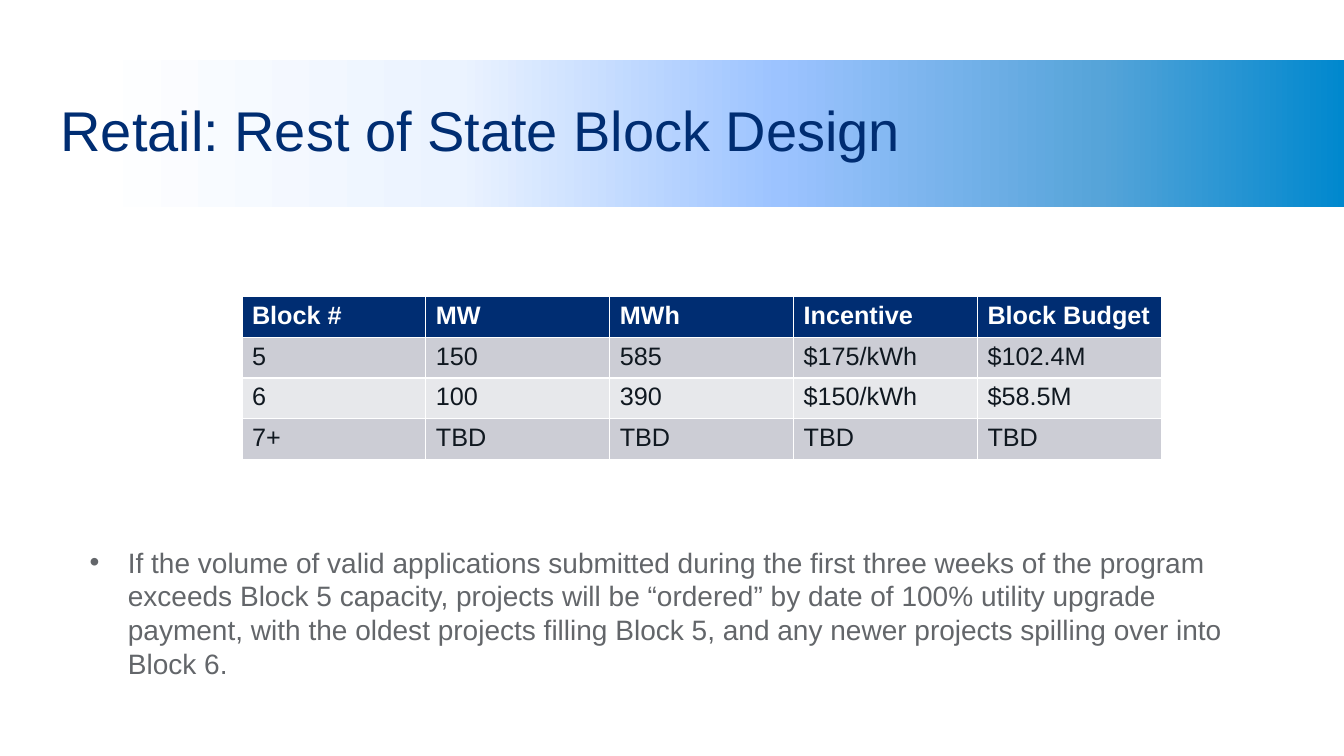
import pptx
import pptx.util
import pptx.oxml.ns
import pptx.enum.shapes
import pptx.enum.text
from lxml import etree
from pptx.dml.color import RGBColor

Inches, Pt, qn = pptx.util.Inches, pptx.util.Pt, pptx.oxml.ns.qn
FONT = "Arial"
COLORS = {"navy": "002D72", "white": "FFFFFF", "ink": "101820", "gray": "63666A",
          "band_dark": "CCCDD5", "band_light": "E7E8EB"}
BANNER_STOPS = [(2, "FFFFFF"), (31, "EBF3FF"), (56, "9CC3FF"), (81, "56A4D9"), (100, "0088CE")]
ROWS = [
    ["Block #", "MW", "MWh", "Incentive", "Block Budget"],
    ["5", "150", "585", "$175/kWh", "$102.4M"],
    ["6", "100", "390", "$150/kWh", "$58.5M"],
    ["7+", "TBD", "TBD", "TBD", "TBD"],
]
NOTE = ("If the volume of valid applications submitted during the first three weeks of the program "
        "exceeds Block 5 capacity, projects will be “ordered” by date of 100% utility upgrade payment, "
        "with the oldest projects filling Block 5, and any newer projects spilling over into Block 6.")


def style(p, size, color, bold=False):
    p.font.name, p.font.size, p.font.bold = FONT, Pt(size), bold
    p.font.color.rgb = RGBColor.from_string(COLORS[color])


prs = pptx.Presentation()
prs.slide_width, prs.slide_height = Inches(13.33), Inches(7.5)
s = prs.slides.add_slide(prs.slide_layouts[5])
title = s.shapes.title

# Gradient banner, from the left margin to the right edge
left, top, height = Inches(0.6), Inches(0.6), Inches(1.45)
width = prs.slide_width - left
banner = s.shapes.add_shape(pptx.enum.shapes.MSO_SHAPE.RECTANGLE, left, top, width, height)
banner.shadow.inherit = False
banner.line.fill.background()
banner.fill.gradient()
banner.fill.gradient_angle = 0
stops = banner._element.spPr.find(".//" + qn("a:gsLst"))
for gs in list(stops):
    stops.remove(gs)
for percent, color in BANNER_STOPS:
    gs = etree.SubElement(stops, qn("a:gs"), pos=str(percent * 1000))
    etree.SubElement(gs, qn("a:srgbClr"), val=color)

# Title, in front of the banner
s.shapes._spTree.append(title._element)
title.left, title.top, title.width, title.height = left, top, width, height
tf = title.text_frame
tf.text = "Retail: Rest of State Block Design"
tf.margin_left = tf.margin_top = tf.margin_right = tf.margin_bottom = 0
tf.vertical_anchor = pptx.enum.text.MSO_ANCHOR.MIDDLE
tf.auto_size = pptx.enum.text.MSO_AUTO_SIZE.NONE
p = tf.paragraphs[0]
p.alignment = pptx.enum.text.PP_ALIGN.LEFT
p.line_spacing = 0.9
style(p, 40, "navy")

# Bulleted note
sp = s.shapes.add_textbox(Inches(0.79), Inches(5.36), Inches(11.94), Inches(1.45))
tf = sp.text_frame
tf.word_wrap = True
tf.text = NOTE
p = tf.paragraphs[0]
style(p, 20, "gray")
pPr = p._p.get_or_add_pPr()
indent = Inches(0.38)
pPr.set("marL", str(indent))
pPr.set("indent", str(-indent))
bullet_font = etree.Element(qn("a:buFont"), typeface=FONT)
bullet = etree.Element(qn("a:buChar"), char="•")
pPr.insert(0, bullet_font)
pPr.insert(1, bullet)

# Block table; the table style draws the white rules
cols, rows = len(ROWS[0]), len(ROWS)
table = s.shapes.add_table(rows, cols, Inches(2.4), Inches(2.94),
                           Inches(9.12), Inches(1.62)).table
for r, texts in enumerate(ROWS):
    header = r == 0
    fill = "navy" if header else "band_dark" if r % 2 else "band_light"
    for c, text in enumerate(texts):
        cell = table.cell(r, c)
        cell.text = text
        cell.fill.solid()
        cell.fill.fore_color.rgb = RGBColor.from_string(COLORS[fill])
        style(cell.text_frame.paragraphs[0], 18, "white" if header else "ink", header)

prs.save("out.pptx")
